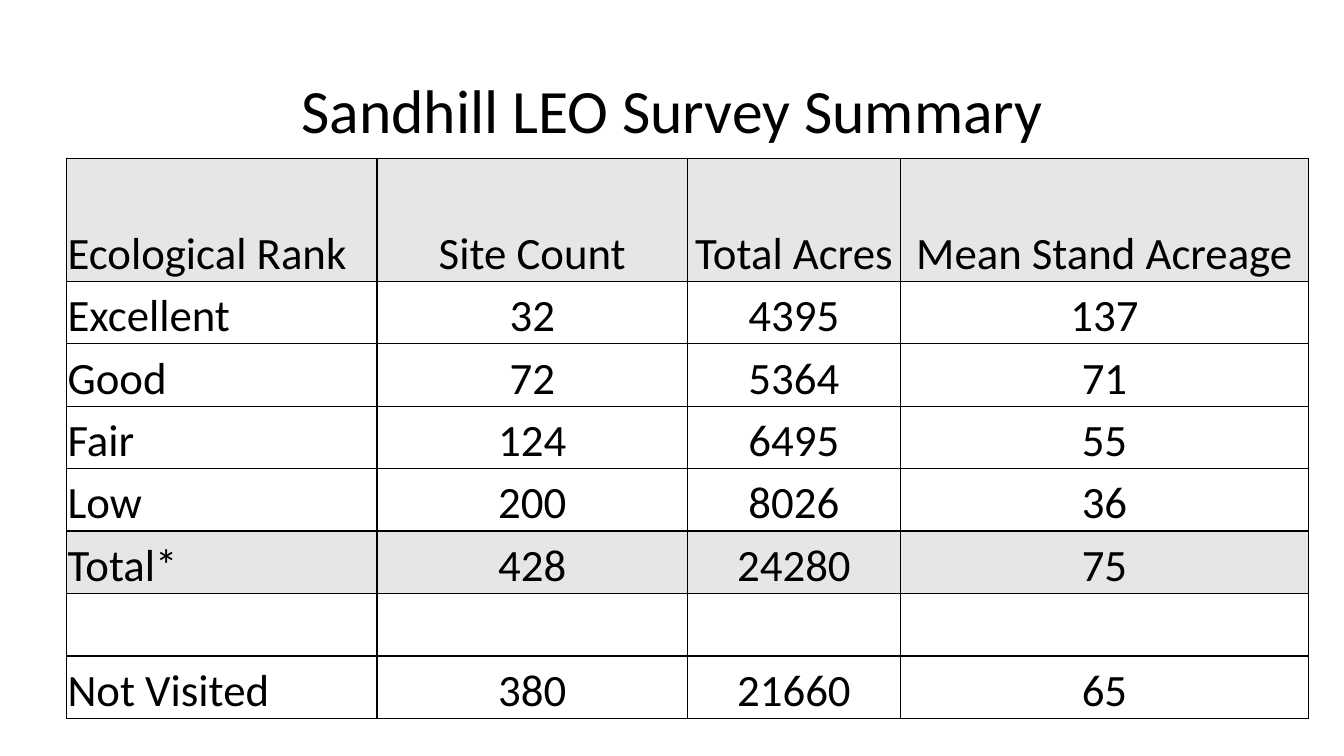
from lxml import etree
from pptx import Presentation
from pptx import util as u
from pptx.dml.color import RGBColor
from pptx.enum import text
from pptx.oxml import ns

COLORS = {"ink": "000000", "shade": "E7E6E6"}
FONT = "Calibri"
COLUMN_WIDTHS = [3.08, 3.08, 2.11, 4.05]
HEADER_HEIGHT, ROW_HEIGHT = 1.22, 0.62
SHADED_RANKS = ("Ecological Rank", "Total*")
SURVEY_ROWS = [
    ("Ecological Rank", "Site Count", "Total Acres", "Mean Stand Acreage"),
    ("Excellent", "32", "4395", "137"),
    ("Good", "72", "5364", "71"),
    ("Fair", "124", "6495", "55"),
    ("Low", "200", "8026", "36"),
    ("Total*", "428", "24280", "75"),
    ("", "", "", ""),
    ("Not Visited", "380", "21660", "65"),
]
CELL_FORMAT = {
    "margin_left": u.Inches(0.01),
    "margin_right": u.Inches(0.01),
    "margin_top": u.Inches(0.01),
    "margin_bottom": 0,
    "vertical_anchor": text.MSO_ANCHOR.BOTTOM,
}


def apply_format(target, values):
    """Set each attribute of the target from a dict of values."""
    for name, value in values.items():
        setattr(target, name, value)


def write_text(para, words, size, align):
    """Write one formatted span into a paragraph."""
    para.alignment = align
    if words:
        span = para.add_run()
        span.text = words
        apply_format(span.font, {"name": FONT, "size": u.Pt(size)})
        span.font.color.rgb = RGBColor.from_string(COLORS["ink"])


def add_borders(cell):
    """Draw a thin line on all four sides of a cell."""
    properties = cell._tc.get_or_add_tcPr()
    for side in ("a:lnL", "a:lnR", "a:lnT", "a:lnB"):
        line = etree.SubElement(properties, ns.qn(side), w=str(u.Pt(1)))
        fill = etree.SubElement(line, ns.qn("a:solidFill"))
        etree.SubElement(fill, ns.qn("a:srgbClr"), val=COLORS["ink"])


def place_title(page, box, words):
    """Place the slide title in its box."""
    title = page.shapes.title
    apply_format(title, dict(zip(("left", "top", "width", "height"), box)))
    frame = title.text_frame
    apply_format(frame, {"word_wrap": True, "vertical_anchor": text.MSO_ANCHOR.MIDDLE})
    para = frame.paragraphs[0]
    para.line_spacing = 0.9
    write_text(para, words, 44, text.PP_ALIGN.CENTER)


def place_table(page, box):
    """Place the survey table in its box."""
    table = page.shapes.add_table(len(SURVEY_ROWS), len(COLUMN_WIDTHS), *box).table
    apply_format(table, {"first_row": False, "horz_banding": False})
    for column, width in zip(table.columns, COLUMN_WIDTHS):
        column.width = u.Inches(width)
    for index, values in enumerate(SURVEY_ROWS):
        table.rows[index].height = u.Inches(ROW_HEIGHT if index else HEADER_HEIGHT)
        for position, words in enumerate(values):
            cell = table.cell(index, position)
            apply_format(cell, CELL_FORMAT)
            add_borders(cell)
            if values[0] in SHADED_RANKS:
                cell.fill.solid()
                cell.fill.fore_color.rgb = RGBColor.from_string(COLORS["shade"])
            else:
                cell.fill.background()
            align = text.PP_ALIGN.CENTER if position else text.PP_ALIGN.LEFT
            write_text(cell.text_frame.paragraphs[0], words, 32, align)


def main():
    """Build the survey summary slide and save it."""
    deck = Presentation()
    deck.slide_width, deck.slide_height = u.Inches(13.33), u.Inches(7.5)
    page = deck.slides.add_slide(deck.slide_layouts[5])
    title_box = [u.Inches(length) for length in (0.92, 0.4, 11.5, 1.45)]
    table_box = [u.Inches(length) for length in (0.66, 1.57, 12.32, 5.56)]
    place_title(page, title_box, "Sandhill LEO Survey Summary")
    place_table(page, table_box)
    deck.save("out.pptx")


if __name__ == "__main__":
    main()
